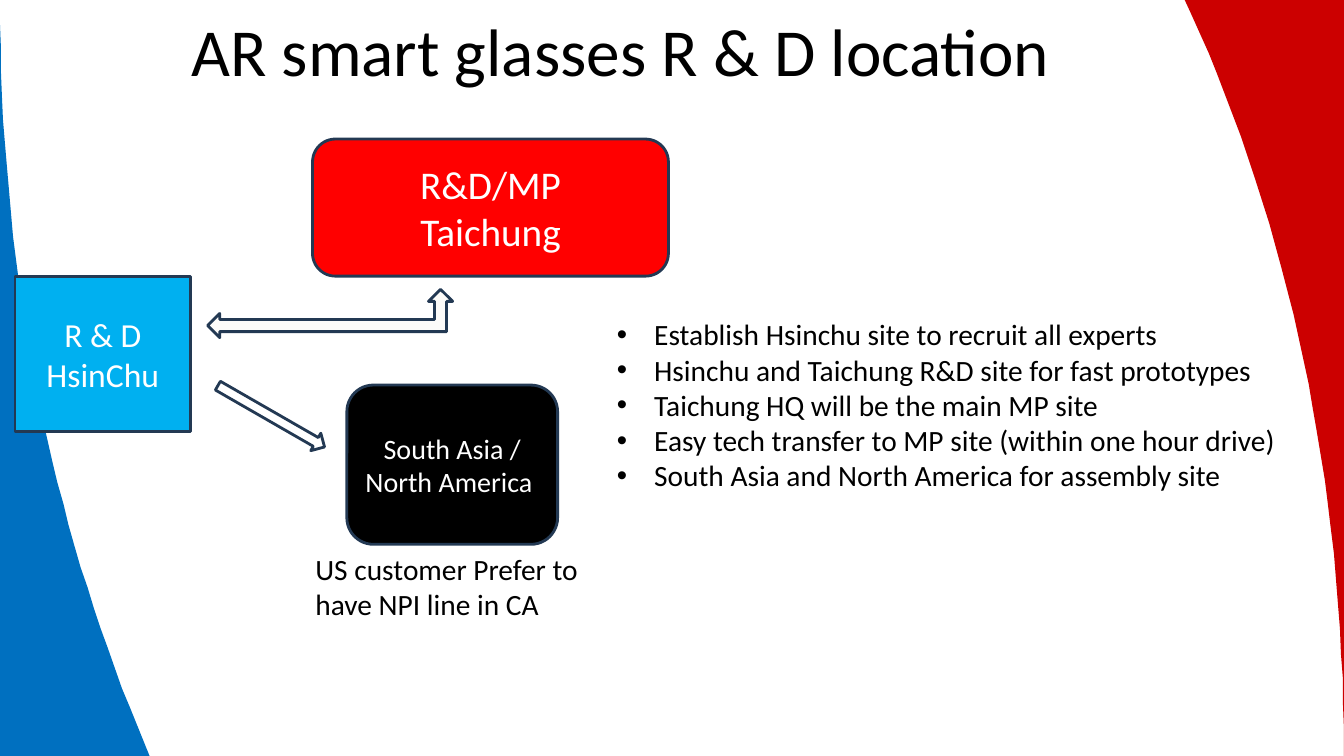
from lxml import etree
from pptx import Presentation
from pptx import util as u
from pptx.dml.color import RGBColor
from pptx.enum import shapes, text
from pptx.oxml.ns import qn

SHAPE = shapes.MSO_SHAPE
MID, TOP = text.MSO_ANCHOR.MIDDLE, text.MSO_ANCHOR.TOP
LEFT, CENTER = text.PP_ALIGN.LEFT, text.PP_ALIGN.CENTER


def px(n):
    return u.Emu(n * 9144)


def color(code):
    return RGBColor.from_string(code)


def curve(a, b, c, d, steps=32):
    points = []
    for i in range(steps + 1):
        t = i / steps
        s = 1 - t
        mix = (s ** 3, 3 * s * s * t, 3 * s * t * t, t ** 3)
        points.append(tuple(sum(m * p[k] for m, p in zip(mix, (a, b, c, d)))
                            for k in (0, 1)))
    return points


class Deck:
    font = "Calibri"
    edge = "233953"
    ink = "000000"
    paper = "FFFFFF"

    def __init__(self, wide, high):
        self.show = Presentation()
        self.show.slide_width, self.show.slide_height = px(wide), px(high)
        self.slide = self.show.slides.add_slide(self.show.slide_layouts[5])

    def paint(self, shape, fill, edge=None):
        shape.shadow.inherit = False
        shape.fill.solid()
        shape.fill.fore_color.rgb = color(fill)
        if edge:
            shape.line.color.rgb = color(edge)
            shape.line.width = u.Pt(2)
        else:
            shape.line.fill.background()

    def label(self, frame, lines, size, ink, align, anchor, bullet=False):
        frame.word_wrap = True
        frame.auto_size = text.MSO_AUTO_SIZE.NONE
        frame.vertical_anchor = anchor
        for i, line in enumerate(lines):
            para = frame.add_paragraph() if i else frame.paragraphs[0]
            para.alignment = align
            if bullet:
                props = para._p.get_or_add_pPr()
                props.set("marL", str(px(37)))
                props.set("indent", str(px(-37)))
                etree.SubElement(props, qn("a:buFont"), typeface="Arial")
                etree.SubElement(props, qn("a:buChar"), char="•")
            run = para.add_run()
            run.text = line
            run.font.name = self.font
            run.font.size = u.Pt(size)
            run.font.color.rgb = color(ink)

    def title(self, box, line):
        head = self.slide.shapes.title
        head.left, head.top, head.width, head.height = map(px, box)
        self.label(head.text_frame, [line], 48, self.ink, CENTER, MID)

    def swoosh(self, points, fill):
        build = self.slide.shapes.build_freeform(*points[0], scale=9144.0)
        build.add_line_segments(points[1:], close=True)
        self.paint(build.convert_to_shape(), fill)

    def block(self, kind, box, fill, lines=(), size=20, turn=0):
        shape = self.slide.shapes.add_shape(kind, *map(px, box))
        shape.rotation = turn
        self.paint(shape, fill, self.edge)
        self.label(shape.text_frame, lines, size, self.paper, CENTER, MID)

    def note(self, box, lines, bullet=False):
        shape = self.slide.shapes.add_textbox(*map(px, box))
        self.label(shape.text_frame, lines, 21, self.ink, LEFT, TOP, bullet)


def main():
    deck = Deck(1333, 750)
    deck.swoosh([(1175, 0), (1333, 0)] + curve(
        (1333, 750), (1333, 477), (1277, 223), (1181, 13)), "CC0000")
    deck.swoosh([(0, 0), (0, 754), (150, 754)] + curve(
        (129, 702), (47, 497), (0, 257), (0, 0)), "0070C0")
    deck.title((123, 19, 985, 61), "AR smart glasses R & D location")

    deck.block(SHAPE.RECTANGLE, (15, 274, 174, 154), "00B0F0",
               ["R & D", "HsinChu"], 24)
    deck.block(SHAPE.ROUNDED_RECTANGLE, (310, 138, 353, 136), "FF0000",
               ["R&D/MP", "Taichung"], 28)
    deck.block(SHAPE.ROUNDED_RECTANGLE, (344, 382, 209, 158), "000000",
               ["South Asia / North America "], 20)
    deck.block(SHAPE.LEFT_UP_ARROW, (206, 287, 243, 48), "FCFBF9")
    deck.block(SHAPE.DOWN_ARROW, (259, 352, 20, 122), "FFFFFF", turn=299.9)

    deck.note((602, 309, 680, 222), [
        "Establish Hsinchu site to recruit all experts",
        "Hsinchu and Taichung R&D site for fast prototypes",
        "Taichung HQ will be the main MP site",
        "Easy tech transfer to MP site (within one hour drive)",
        "South Asia and North America for assembly site",
    ], bullet=True)
    deck.note((303, 542, 290, 81),
              ["US customer Prefer to", "have NPI line in CA"])
    deck.show.save("out.pptx")


if __name__ == "__main__":
    main()
